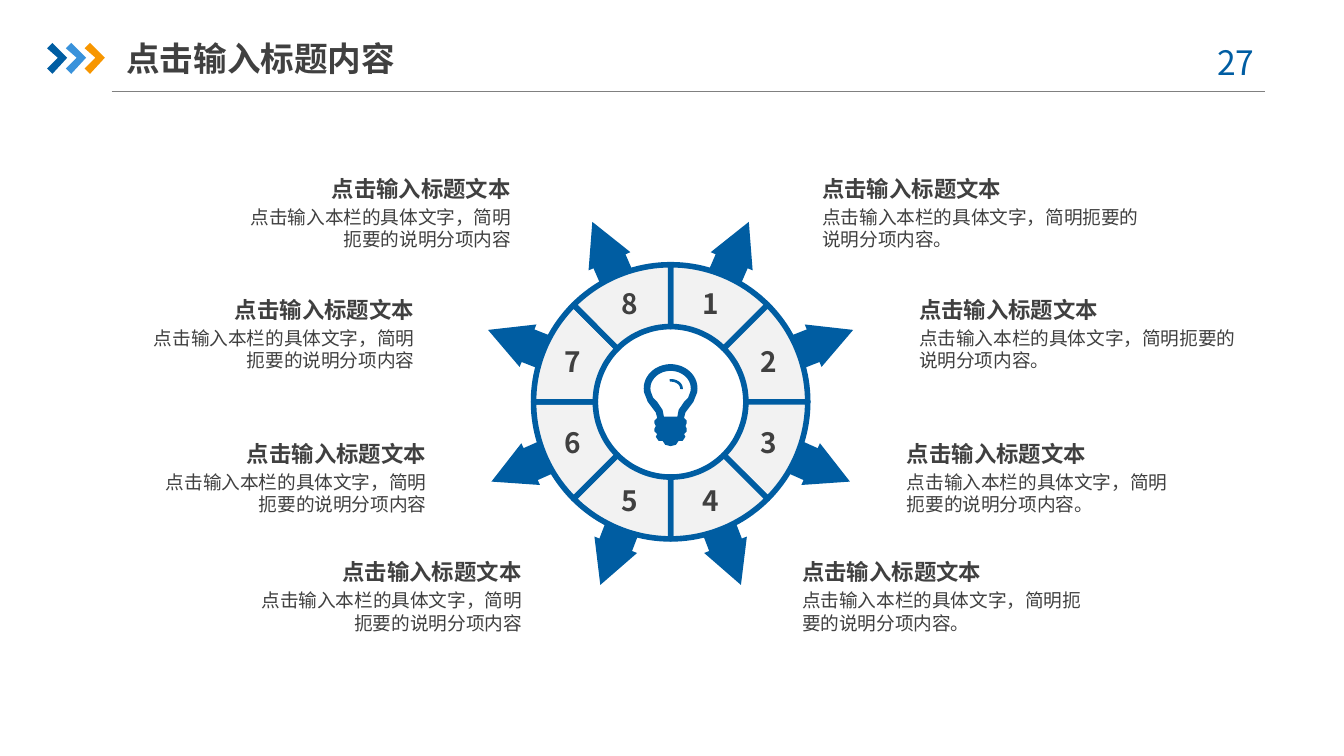
from math import cos, radians, sin

from lxml.etree import SubElement
from pptx import Presentation
from pptx.dml.color import RGBColor
from pptx.enum.shapes import MSO_CONNECTOR as Connector
from pptx.enum.text import MSO_ANCHOR as Anchor, PP_ALIGN as Align
from pptx.oxml.ns import qn
from pptx.util import Inches, Pt

WIDTH = 10
HEIGHT = WIDTH * 9 / 16
FONT = "Noto Sans CJK SC"
COLORS = {"blue": "005DA2", "sky": "3992DB", "orange": "F79600",
          "pale": "F2F2F2", "text": "404040", "rule": "808080"}

TITLE = "点击输入标题内容"
PAGE_NUMBER = "27"
HEADING = "点击输入标题文本"
BODY = "点击输入本栏的具体文字，简明扼要的说明分项内容"

# Caption rows, top to bottom, and (left, width) in each row
ROW_TOPS = [1.24, 2.14, 3.21, 4.09]
ROW_HEIGHT = 0.69
RIGHT_COLUMN = [(6.02, 2.6), (6.74, 2.67), (6.65, 2.2), (5.87, 2.38)]
LEFT_COLUMN = [(1.74, 2.16), (1.02, 2.16), (1.11, 2.16), (1.77, 2.21)]

# Wheel: bearings run clockwise from the top
CENTER = (4.99, 2.99)
INNER, OUTER, LABEL_RADIUS = 0.56, 1.02, 0.79
SECTOR_ANGLE = 45
ARROW_BEARINGS = [23.5, 68.5, 114, 159, 201, 246, 291.5, 336.5]
# Half of an arrow: distance from the center, distance from its axis
ARROW_HALF = [(0.56, 0.13), (1.14, 0.13), (1.14, 0.17), (1.46, 0)]

# Bulb: right half below the head, as (offset from axis, y)
BULB_CENTER = (4.99, 2.89)
BULB_BASE = [(0.17, 2.99), (0.14, 3.03), (0.11, 3.07), (0.1, 3.11),
             (0.12, 3.13), (0.12, 3.15), (0.11, 3.17), (0.12, 3.19),
             (0.12, 3.21), (0.1, 3.23), (0.11, 3.25), (0.09, 3.28),
             (0.06, 3.28), (0.04, 3.31), (0, 3.32)]
BULB_NECK = [(0.13, 2.96), (0.1, 2.99), (0.06, 3.05), (0.05, 3.1)]

CHEVRON = [(0, 0.04), (0.04, 0), (0.15, 0.11), (0.04, 0.23), (0, 0.19),
           (0.08, 0.11)]
CHEVRON_LEFT, CHEVRON_TOP, CHEVRON_STEP = 0.35, 0.32, 0.14


def color(name):
    return RGBColor.from_string(COLORS[name])


def arc(center, radius_x, radius_y, start, end, steps=20):
    """Points along an ellipse between two clockwise bearings."""
    angles = [radians(start + (end - start) * i / steps)
              for i in range(steps + 1)]
    return [(center[0] + radius_x * sin(a), center[1] - radius_y * cos(a))
            for a in angles]


def add_outline(slide, contours, fill, line=None):
    """Draw closed contours as one filled shape."""
    contours = [[(Inches(x), Inches(y)) for x, y in c] for c in contours]
    builder = slide.shapes.build_freeform(*contours[0][0])
    for index, contour in enumerate(contours):
        if index:
            builder.move_to(*contour[0])
        builder.add_line_segments(contour[1:], close=True)
    shape = builder.convert_to_shape()
    shape.shadow.inherit = False
    shape.fill.solid()
    shape.fill.fore_color.rgb = color(fill)
    if line:
        shape.line.color.rgb = color(line)
        shape.line.width = Pt(3)
    else:
        shape.line.fill.background()


def add_text(slide, frame, lines, align=Align.LEFT, ink="text", inset=0.1):
    """Lines are (text, size, bold); several lines are set tight."""
    box = slide.shapes.add_textbox(*map(Inches, frame)).text_frame
    box.word_wrap = True
    box.vertical_anchor = Anchor.MIDDLE
    box.margin_left = box.margin_right = Inches(inset)
    for index, (text, size, bold) in enumerate(lines):
        para = box.add_paragraph() if index else box.paragraphs[0]
        para.text = text
        para.alignment = align
        if index:
            para.space_before = Pt(size * 0.2)
        if len(lines) > 1:
            para.line_spacing = Pt(size * 1.2)
        para.font.name = FONT
        para.font.size = Pt(size)
        para.font.bold = bold
        para.font.color.rgb = color(ink)
        for span in para.runs:
            properties = span._r.get_or_add_rPr()
            SubElement(properties, qn("a:ea")).set("typeface", FONT)


def add_header(slide):
    rule = slide.shapes.add_connector(
        Connector.STRAIGHT, *map(Inches, (0.83, 0.68, 9.41, 0.68)))
    rule.line.color.rgb = color("rule")
    rule.line.width = Pt(0.75)
    SubElement(rule._element.spPr, qn("a:effectLst"))
    for index, fill in enumerate(("blue", "sky", "orange")):
        left = CHEVRON_LEFT + index * CHEVRON_STEP
        add_outline(slide, [[(left + x, CHEVRON_TOP + y)
                             for x, y in CHEVRON]], fill)
    add_text(slide, (8.83, 0.26, 0.73, 0.4), [(PAGE_NUMBER, 18, False)],
             Align.CENTER, "blue")
    add_text(slide, (0.94, 0.22, 2.33, 0.42), [(TITLE, 18, True)], inset=0)


def add_arrow(slide, bearing):
    angle = radians(bearing)
    half = ARROW_HALF + [(r, -w) for r, w in ARROW_HALF[-2::-1]]
    add_outline(slide, [[(CENTER[0] + r * sin(angle) - w * cos(angle),
                          CENTER[1] - r * cos(angle) - w * sin(angle))
                         for r, w in half]], "blue")


def add_wheel(slide):
    for index, bearing in enumerate(ARROW_BEARINGS):
        start = index * SECTOR_ANGLE
        end = start + SECTOR_ANGLE
        add_arrow(slide, bearing)
        add_outline(slide, [arc(CENTER, OUTER, OUTER, start, end)
                            + arc(CENTER, INNER, INNER, end, start)],
                    "pale", "blue")


def add_numbers(slide):
    for index in range(len(ARROW_BEARINGS)):
        middle = (index + 0.5) * SECTOR_ANGLE
        x, y = arc(CENTER, LABEL_RADIUS, LABEL_RADIUS, middle, middle, 1)[0]
        add_text(slide, (x - 0.2, y - 0.11, 0.4, 0.22),
                 [(str(index + 1), 15, True)], Align.CENTER)


def add_bulb(slide):
    axis = BULB_CENTER[0]

    def contour(radius_x, radius_y, lower):
        right = arc(BULB_CENTER, radius_x, radius_y, 0, 100)
        right += [(axis + x, y) for x, y in lower]
        return right + [(2 * axis - x, y) for x, y in right[:0:-1]]

    add_outline(slide, [contour(0.2, 0.18, BULB_BASE),
                        contour(0.15, 0.13, BULB_NECK)], "blue")
    add_outline(slide, [arc(BULB_CENTER, 0.09, 0.07, -5, 95)
                        + arc(BULB_CENTER, 0.07, 0.05, 95, -5)], "blue")


def add_captions(slide):
    for column, align, ending in ((RIGHT_COLUMN, Align.LEFT, "。"),
                                  (LEFT_COLUMN, Align.RIGHT, "")):
        for top, (left, width) in zip(ROW_TOPS, column):
            add_text(slide, (left, top, width, ROW_HEIGHT),
                     [(HEADING, 12, True), (BODY + ending, 10, False)], align)


def main():
    deck = Presentation()
    deck.slide_width, deck.slide_height = Inches(WIDTH), Inches(HEIGHT)
    page = deck.slides.add_slide(deck.slide_layouts[6])
    add_header(page)
    add_wheel(page)
    add_bulb(page)
    add_captions(page)
    add_numbers(page)
    deck.save("out.pptx")


if __name__ == "__main__":
    main()
